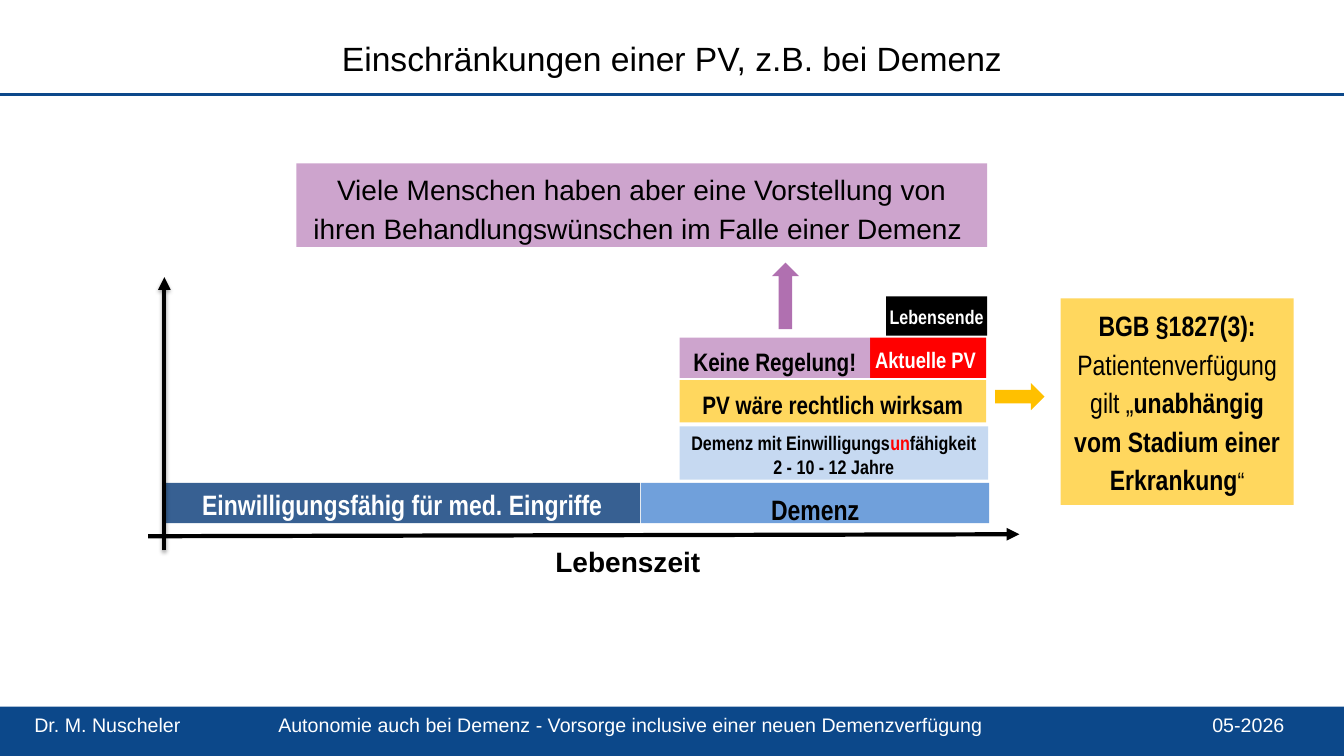
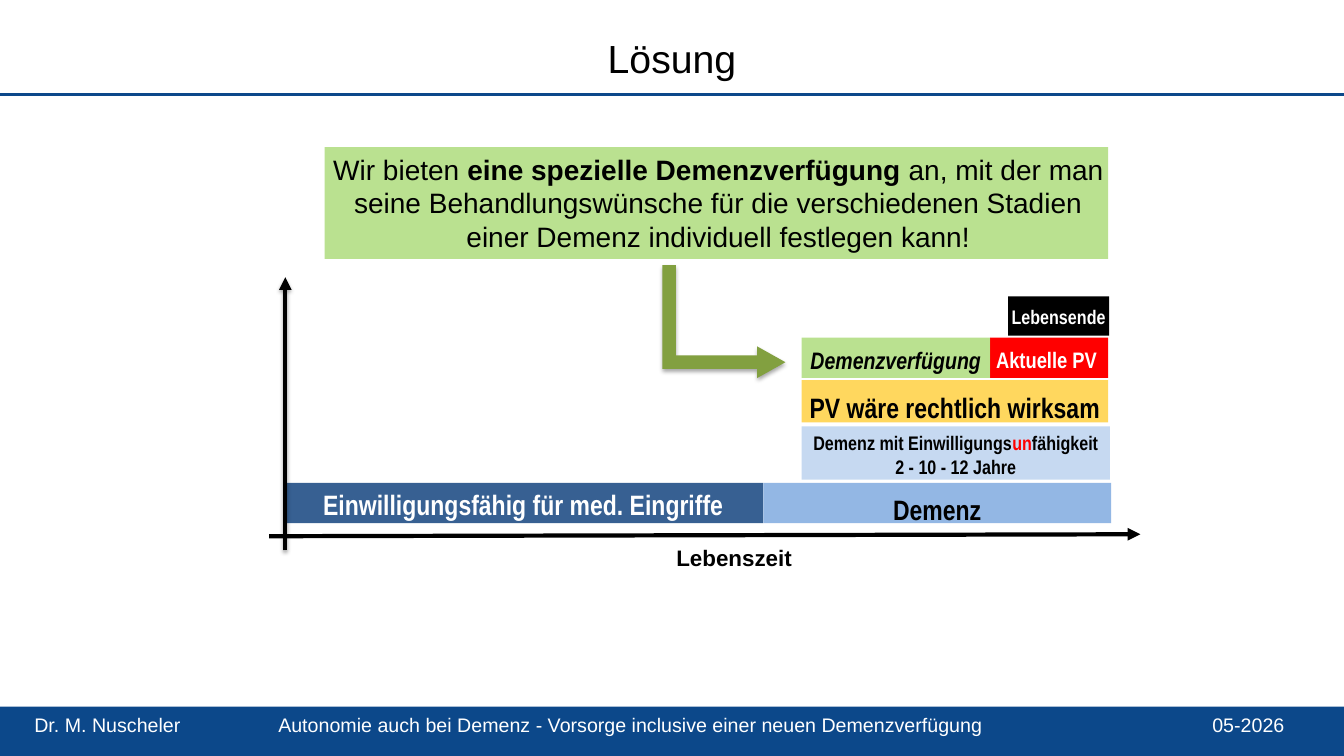
from lxml import etree
from pptx import Presentation
from pptx.dml.color import RGBColor
from pptx.enum.shapes import MSO_CONNECTOR, MSO_SHAPE
from pptx.enum.text import MSO_ANCHOR, PP_ALIGN
from pptx.oxml.ns import qn
from pptx.util import Emu, Pt

PX = 9144
WIDTH, HEIGHT = 1333, 750
RECT, RIGHT_ARROW, BENT_ARROW = MSO_SHAPE.RECTANGLE, MSO_SHAPE.RIGHT_ARROW, MSO_SHAPE.BENT_UP_ARROW
STRAIGHT = MSO_CONNECTOR.STRAIGHT
TOP = MSO_ANCHOR.TOP
LEFT, CENTER = PP_ALIGN.LEFT, PP_ALIGN.CENTER

SANS, NARROW = "Arial", "Arial Narrow"
BLACK, WHITE, RED = "000000", "FFFFFF", "FF0000"
NAVY, STEEL, BLUE, PALE_BLUE = "0C488A", "376092", "558ED5", "C6D9F1"
AMBER, PURPLE, GREEN, OLIVE = "FFC000", "B070B0", "92D050", "82A040"
TINT = 63

DEFAULT_INSETS = (10, 5, 10, 5)
SLIM_INSETS = (4, 5, 4, 5)
EVEN_INSETS = (8, 4, 8, 4)
FLUSH_INSETS = (0, 5, 0, 5)


def px(length):
    return Emu(length * PX)


def color(value):
    return RGBColor.from_string(value)


def child(parent, tag, **attributes):
    return etree.SubElement(parent, qn(tag), {key: str(value) for key, value in attributes.items()})


def bold(text, **style):
    return text, dict(bold=True, **style)


class Deck:
    def __init__(self):
        self.presentation = Presentation()
        self.presentation.slide_width = px(WIDTH)
        self.presentation.slide_height = px(HEIGHT)
        self.slide = None

    def start(self, title, size, top):
        self.slide = self.presentation.slides.add_slide(self.presentation.slide_layouts[6])
        self.footer()
        self.line((0, 94), (WIDTH, 94), NAVY, 2.25)
        self.label((0, top, WIDTH, 50), [title], size, CENTER)

    def footer(self):
        band = self.shape((0, 701, WIDTH, HEIGHT - 701), NAVY)
        frame = band.text_frame
        self.frame(frame, (34, 6, 12, 6), True)
        paragraph = frame.paragraphs[0]
        stops = child(paragraph._p.get_or_add_pPr(), "a:tabLst")
        for position, side in ((242, "l"), (1240, "r")):
            child(stops, "a:tab", pos=px(position), algn=side)
        paragraph.alignment = LEFT
        entries = ("Dr. M. Nuscheler",
                   "\tAutonomie auch bei Demenz - Vorsorge inclusive einer neuen Demenzverfügung",
                   "\t05-2026")
        for entry in entries:
            self.run(paragraph, entry, 14, SANS, WHITE)

    def frame(self, frame, insets, wrap):
        frame.word_wrap = wrap
        frame.vertical_anchor = TOP
        (frame.margin_left, frame.margin_top,
         frame.margin_right, frame.margin_bottom) = map(px, insets)

    def run(self, paragraph, text, size, face, ink, bold=False, italic=False):
        run = paragraph.add_run()
        run.text = text
        font = run.font
        font.size, font.name = Pt(size), face
        font.bold, font.italic = bold, italic
        font.color.rgb = color(ink)

    def paragraphs(self, frame, lines, size, face, ink, align, spacing, after):
        for index, line in enumerate(lines):
            paragraph = frame.add_paragraph() if index else frame.paragraphs[0]
            paragraph.alignment = align
            paragraph.line_spacing = spacing
            paragraph.space_after = Pt(after)
            for part in line:
                text, style = (part, {}) if isinstance(part, str) else part
                self.run(paragraph, text, **{"size": size, "face": face, "ink": ink, **style})

    def shadow(self, effects, alpha, distance):
        shadow = child(effects, "a:outerShdw", blurRad=Pt(3.1), dist=Pt(distance),
                       dir=90 * 60000, rotWithShape=0)
        child(child(shadow, "a:srgbClr", val=BLACK), "a:alpha", val=alpha * 1000)

    def shape(self, box, fill, opacity=100, kind=RECT, rotation=0):
        shape = self.slide.shapes.add_shape(kind, *map(px, box))
        shape.rotation = rotation
        shape.shadow.inherit = False
        shape.line.fill.background()
        shape.fill.solid()
        shape.fill.fore_color.rgb = color(fill)
        if opacity < 100:
            tone = shape._element.spPr.find(".//" + qn("a:srgbClr"))
            child(tone, "a:alpha", val=opacity * 1000)
        return shape

    def block(self, box, fill, lines, size, ink=BLACK, face=NARROW, opacity=100,
              insets=DEFAULT_INSETS, spacing=1.15, after=10):
        frame = self.shape(box, fill, opacity).text_frame
        self.frame(frame, insets, True)
        self.paragraphs(frame, lines, size, face, ink, CENTER, spacing, after)

    def label(self, box, line, size, align=LEFT):
        frame = self.slide.shapes.add_textbox(*map(px, box)).text_frame
        self.frame(frame, DEFAULT_INSETS, align == CENTER)
        self.paragraphs(frame, [line], size, SANS, BLACK, align, 1.0, 0)

    def line(self, start, end, ink, width, arrow=False, shaded=False):
        line = self.slide.shapes.add_connector(STRAIGHT, *map(px, start + end))
        line.line.color.rgb = color(ink)
        line.line.width = Pt(width)
        properties = line._element.spPr
        if arrow:
            child(properties.find(qn("a:ln")), "a:tailEnd", type="triangle")
        effects = child(properties, "a:effectLst")
        if shaded:
            self.shadow(effects, 38, 1.6)

    def bent_arrow(self, box, fill, adjustments):
        arrow = self.shape(box, fill, kind=BENT_ARROW, rotation=270)
        for index, value in enumerate(adjustments):
            arrow.adjustments[index] = value
        properties = arrow._element.spPr
        frame = properties.find(qn("a:xfrm"))
        frame.set("flipH", "1")
        frame.set("flipV", "1")
        self.shadow(properties.find(qn("a:effectLst")), 35, 1.8)

    def timeline(self, axis, capable_left, capable_width, stage, dementia_opacity,
                 validity_size, directive, directive_width, directive_fill, directive_size, lifetime_size):
        stage_width = 304
        self.block((capable_left, 479, capable_width, 40), STEEL,
                   [[bold("Einwilligungsfähig für med. Eingriffe")]], 20, WHITE, spacing=1.0)
        self.block((stage, 423, 306, 53), PALE_BLUE,
                   [[bold("Demenz mit Einwilligungs"), bold("un", ink=RED), bold("fähigkeit")],
                    [bold("2 - 10 - 12 Jahre")]], 14, spacing=1.0, after=0)
        self.block((stage + 205, 294, 100, 39), BLACK, [[bold("Lebensende")]], 14, WHITE,
                   insets=FLUSH_INSETS)
        self.block((stage, 377, stage_width, 42), AMBER, [[bold("PV wäre rechtlich wirksam")]],
                   validity_size, opacity=TINT, insets=SLIM_INSETS)
        self.line((axis - 16, 532), (axis + 848, 530), BLACK, 3, arrow=True)
        self.block((stage + directive_width, 335, stage_width - directive_width, 40), RED,
                   [[bold("Aktuelle PV ")]], 16, WHITE, insets=FLUSH_INSETS)
        self.block((stage, 335, directive_width, 40), directive_fill, [[directive]], directive_size,
                   opacity=TINT, insets=EVEN_INSETS)
        self.line((axis, 546), (axis, 275), BLACK, 3, arrow=True, shaded=True)
        self.block((stage - 38, 479, 345, 40), BLUE, [[bold("Demenz")]], 20,
                   opacity=dementia_opacity)
        self.label((axis + 378, 535, 171, 44), [bold("Lebenszeit")], lifetime_size)


def limits(deck):
    deck.start("Einschränkungen einer PV, z.B. bei Demenz", 24, 33)
    deck.timeline(axis=163, capable_left=163, capable_width=472, stage=674, dementia_opacity=84,
                  validity_size=18, directive=bold("Keine Regelung!"), directive_width=189,
                  directive_fill=PURPLE, directive_size=18, lifetime_size=20)
    deck.block((294, 162, 685, 83), PURPLE,
               [["Viele Menschen haben aber eine Vorstellung von ihren Behandlungswünschen "
                 "im Falle einer Demenz "]], 20, face=SANS, opacity=TINT, insets=EVEN_INSETS)
    deck.shape((746, 280, 66, 27), PURPLE, kind=RIGHT_ARROW, rotation=270)
    deck.block((1052, 296, 231, 205), AMBER,
               [[bold("BGB §1827(3): "), "Patientenverfügung gilt „",
                 bold("unabhängig vom Stadium einer Erkrankung"), ("“", {"size": 18})]],
               20, opacity=TINT, insets=SLIM_INSETS)
    deck.shape((987, 380, 49, 27), AMBER, kind=RIGHT_ARROW)


def solution(deck):
    deck.start("Lösung", 28, 29)
    deck.block((322, 146, 777, 111), GREEN,
               [["Wir bieten ", bold("eine spezielle Demenzverfügung "),
                 "an, mit der man seine Behandlungswünsche für die verschiedenen Stadien "
                 "einer Demenz individuell festlegen kann!"]],
               20, face=SANS, opacity=TINT, insets=(4, 5, 0, 5), spacing=1.0, after=0)
    deck.timeline(axis=283, capable_left=281, capable_width=476, stage=795, dementia_opacity=TINT,
                  validity_size=20, directive=bold("Demenzverfügung", italic=True),
                  directive_width=187, directive_fill=GREEN, directive_size=17, lifetime_size=16)
    deck.bent_arrow((662, 258, 112, 122), OLIVE, (0.12, 0.14, 0.25))


def main():
    deck = Deck()
    limits(deck)
    solution(deck)
    deck.presentation.save("out.pptx")


if __name__ == "__main__":
    main()
